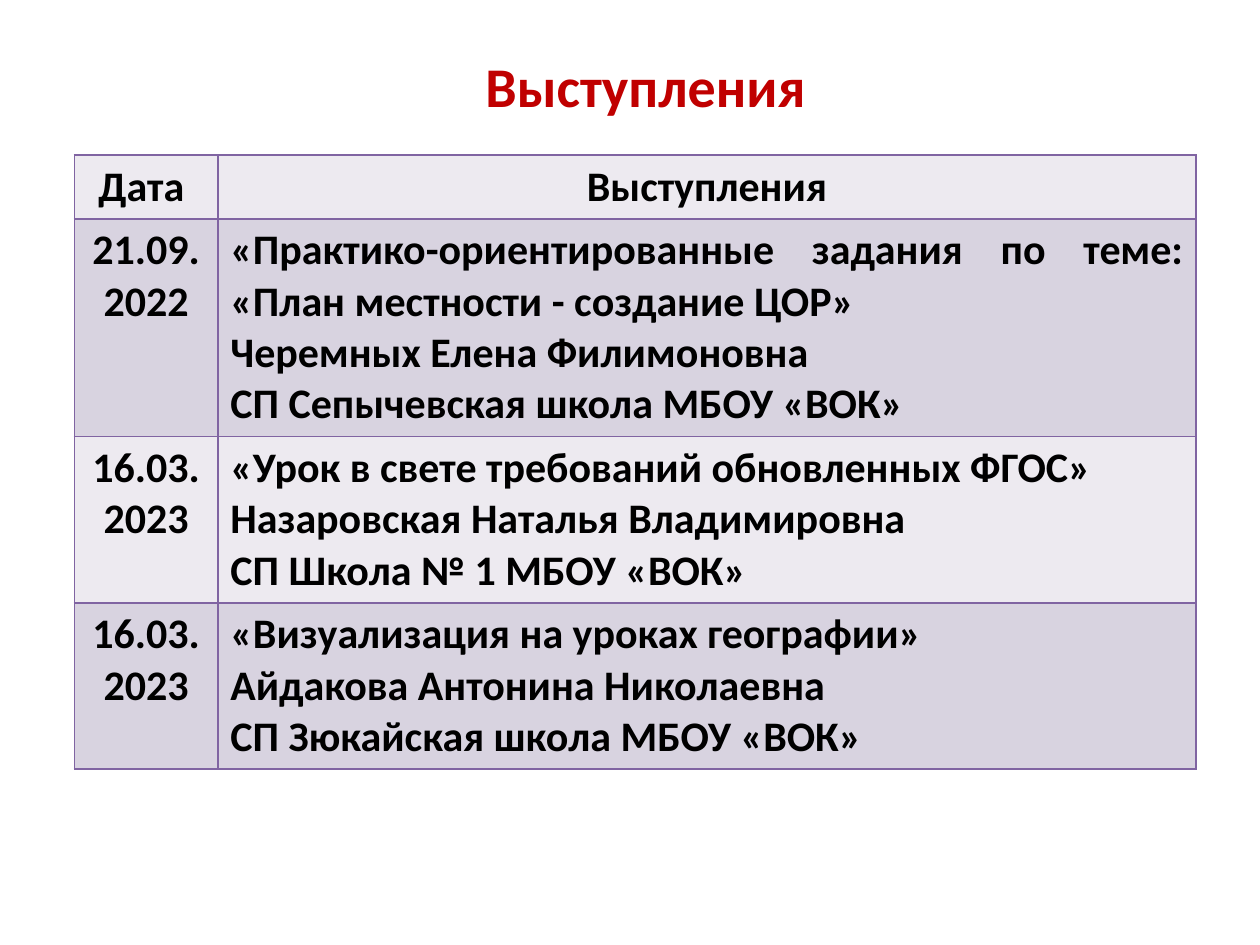
from dataclasses import dataclass

from lxml.etree import SubElement
from pptx import Presentation
from pptx.dml.color import RGBColor as RGB
from pptx.enum.text import MSO_AUTO_SIZE as Fit, PP_ALIGN as Align
from pptx.oxml.ns import qn
from pptx.util import Pt


@dataclass(frozen=True)
class Theme:
    font: str = "Calibri"
    title: str = "C00000"
    ink: str = "000000"
    line: str = "8064A2"
    bands: tuple = ("EDEAF0", "D8D3E0")
    big: int = 32
    body: int = 24


theme = Theme()


def write(frame, lines, size, color, align):
    """Fill the frame with one bold paragraph per line."""
    for i, line in enumerate(lines):
        para = frame.paragraphs[0] if i == 0 else frame.add_paragraph()
        para.alignment = align
        run = para.add_run()
        run.text = line
        font = run.font
        font.name, font.size, font.bold = theme.font, Pt(size), True
        font.color.rgb = RGB.from_string(color)


def frame_cell(cell):
    """Draw a thin line on all four sides of the cell."""
    props = cell._tc.get_or_add_tcPr()
    for side in ("lnL", "lnR", "lnT", "lnB"):
        edge = SubElement(props, qn(f"a:{side}"), w=str(Pt(1)))
        fill = SubElement(edge, qn("a:solidFill"))
        SubElement(fill, qn("a:srgbClr"), val=theme.line)


deck = Presentation()
deck.slide_width, deck.slide_height = Pt(720), Pt(540)
slide = deck.slides.add_slide(deck.slide_layouts[6])

# Each row: date lines, talk lines, talk alignment, height in text lines
rows = [
    (["Дата "], ["Выступления"], Align.CENTER, 1),
    (["21.09.", "2022"],
     ["«Практико-ориентированные задания по теме: «План местности - создание ЦОР»",
      "Черемных Елена Филимоновна",
      "СП Сепычевская школа МБОУ «ВОК»"], Align.JUSTIFY, 4),
    (["16.03.", "2023"],
     ["«Урок в свете требований обновленных ФГОС» Назаровская Наталья Владимировна",
      "СП Школа № 1 МБОУ «ВОК»"], Align.LEFT, 3),
    (["16.03.", "2023"],
     ["«Визуализация на уроках географии»",
      "Айдакова Антонина Николаевна",
      "СП Зюкайская школа МБОУ «ВОК»"], Align.LEFT, 3),
]
widths = (82, 559)
heights = [7.2 + 29.3 * row[3] for row in rows]

table = slide.shapes.add_table(
    len(rows), len(widths), Pt(42.5), Pt(88.5), Pt(sum(widths)), Pt(sum(heights))
).table
for col, width in zip(table.columns, widths):
    col.width = Pt(width)

for r, (date, talk, align, _) in enumerate(rows):
    table.rows[r].height = Pt(heights[r])
    for c, (lines, side) in enumerate(((date, Align.CENTER), (talk, align))):
        cell = table.cell(r, c)
        frame_cell(cell)
        cell.fill.solid()
        cell.fill.fore_color.rgb = RGB.from_string(theme.bands[r % 2])
        write(cell.text_frame, lines, theme.body, theme.ink, side)

title = slide.shapes.add_textbox(Pt(269.3), Pt(26), Pt(199.4), Pt(46)).text_frame
title.word_wrap = False
title.auto_size = Fit.SHAPE_TO_FIT_TEXT
write(title, ["Выступления"], theme.big, theme.title, Align.CENTER)

deck.save("out.pptx")
